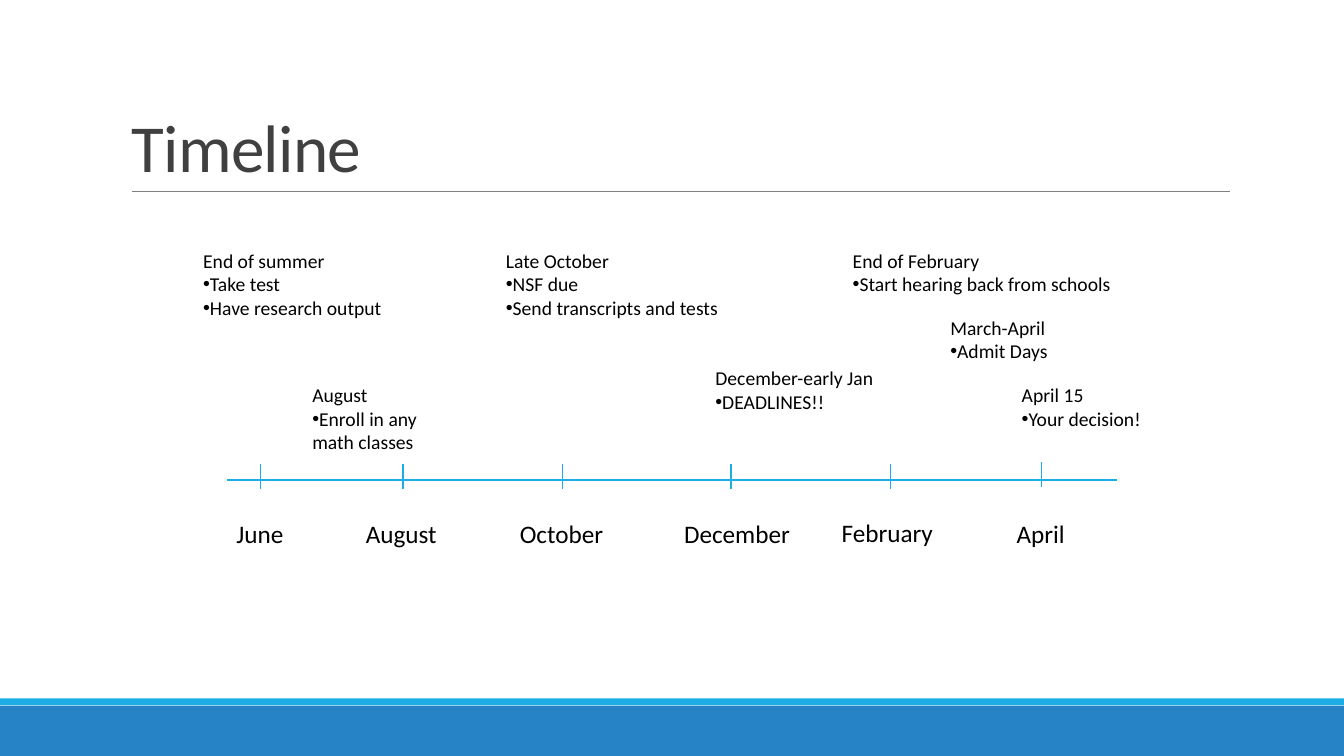
from lxml import etree
from pptx import Presentation
from pptx.dml.color import RGBColor
from pptx.enum.shapes import MSO_CONNECTOR, MSO_SHAPE
from pptx.enum.text import MSO_ANCHOR, MSO_AUTO_SIZE
from pptx.oxml.ns import qn
from pptx.util import Cm, Pt

STRAIGHT = MSO_CONNECTOR.STRAIGHT
RECTANGLE = MSO_SHAPE.RECTANGLE
TOP, BOTTOM = MSO_ANCHOR.TOP, MSO_ANCHOR.BOTTOM
FIT_TEXT, NO_FIT = MSO_AUTO_SIZE.SHAPE_TO_FIT_TEXT, MSO_AUTO_SIZE.NONE

BLUE = RGBColor(0x26, 0x83, 0xC6)
CYAN = RGBColor(0x1C, 0xAD, 0xE4)
GRAY = RGBColor(0x80, 0x80, 0x80)
DARK = RGBColor(0x40, 0x40, 0x40)
BLACK = RGBColor(0, 0, 0)
FONT = "Calibri"
BULLET = "•"

# Content; lengths in centimetres
SLIDE_WIDTH, SLIDE_HEIGHT = 33.87, 19.05
TITLE = "Timeline"
BANDS = [(17.78, 1.27, BLUE), (17.6, 0.17, CYAN)]  # top, height, colour

AXIS_LEFT, AXIS_RIGHT, AXIS_Y = 5.71, 28.15, 12.1
TICK_TOP, TICK_HEIGHT = 11.68, 0.64
LABEL_TOP, LABEL_HEIGHT = 12.94, 1.02
MONTHS = [  # name, tick x, label left, label width, vertical shift of tick, of label
    ("June", 6.56, 5.71, 1.73, 0, 0),
    ("August", 10.16, 8.97, 2.31, 0, 0),
    ("October", 14.18, 12.85, 2.64, 0, 0),
    ("December", 18.42, 16.99, 3.23, 0, 0),
    ("February", 22.44, 20.96, 2.84, 0, -0.04),
    ("April", 26.25, 25.37, 1.73, -0.04, 0),
]

EVENTS = [  # left, top, width, lines
    (4.87, 6.14, 5.05, ["End of summer", "•Take test", "•Have research output"]),
    (7.62, 9.53, 3.18, ["August", "•Enroll in any", "math classes"]),
    (17.78, 9.1, 4.55, ["December-early Jan", "•DEADLINES!!"]),
    (12.5, 6.14, 5.97, ["Late October", "•NSF due", "•Send transcripts and tests"]),
    (21.24, 6.14, 7.06, ["End of February", "•Start hearing back from schools"]),
    (25.5, 9.53, 3.53, ["April 15", "•Your decision!"]),
    (23.7, 7.83, 3.0, ["March-April", "•Admit Days"]),
]
LINE_HEIGHT, BOX_PADDING = 0.6, 0.25

presentation = Presentation()
presentation.slide_width = Cm(SLIDE_WIDTH)
presentation.slide_height = Cm(SLIDE_HEIGHT)
slide = presentation.slides.add_slide(presentation.slide_layouts[6])


def add_text(lines, left, top, width, height, *, size, color=BLACK, wrap=False,
             anchor=TOP, fit=FIT_TEXT, line_spacing=None, tracking=None):
    box = slide.shapes.add_textbox(Cm(left), Cm(top), Cm(width), Cm(height))
    frame = box.text_frame
    frame.word_wrap = wrap
    frame.auto_size = fit
    frame.vertical_anchor = anchor
    for index, line in enumerate(lines):
        paragraph = frame.add_paragraph() if index else frame.paragraphs[0]
        if line_spacing:
            paragraph.line_spacing = line_spacing
        if line.startswith(BULLET):
            properties = paragraph._p.get_or_add_pPr()
            etree.SubElement(properties, qn("a:buFont"), typeface="Arial")
            etree.SubElement(properties, qn("a:buChar"), char=BULLET)
        run = paragraph.add_run()
        run.text = line.removeprefix(BULLET)
        run.font.name = FONT
        run.font.size = Pt(size)
        run.font.color.rgb = color
        if tracking:
            run._r.get_or_add_rPr().set("spc", str(tracking))


def add_line(x1, y1, x2, y2, color, width):
    line = slide.shapes.add_connector(STRAIGHT, Cm(x1), Cm(y1), Cm(x2), Cm(y2))
    line.line.color.rgb = color
    line.line.width = Pt(width)
    etree.SubElement(line._element.spPr, qn("a:effectLst"))


# Footer bands
for top, height, color in BANDS:
    band = slide.shapes.add_shape(RECTANGLE, 0, Cm(top), Cm(SLIDE_WIDTH), Cm(height))
    band.shadow.inherit = False
    band.fill.solid()
    band.fill.fore_color.rgb = color
    band.line.fill.background()

# Title and its rule
add_line(3.32, 4.83, 31.0, 4.83, GRAY, 0.5)
add_text([TITLE], 3.06, 0.79, 27.94, 4.03, size=48, color=DARK, wrap=True,
         anchor=BOTTOM, fit=NO_FIT, line_spacing=0.85, tracking=-50)

# Axis with month ticks and labels
add_line(AXIS_LEFT, AXIS_Y, AXIS_RIGHT, AXIS_Y, CYAN, 1)
for name, tick_x, left, width, tick_shift, label_shift in MONTHS:
    tick_top = TICK_TOP + tick_shift
    add_line(tick_x, tick_top, tick_x, tick_top + TICK_HEIGHT, CYAN, 1)
    add_text([name], left, LABEL_TOP + label_shift, width, LABEL_HEIGHT, size=18)

# Events above the axis
for left, top, width, lines in EVENTS:
    add_text(lines, left, top, width, LINE_HEIGHT * len(lines) + BOX_PADDING, size=14)

presentation.save("out.pptx")
